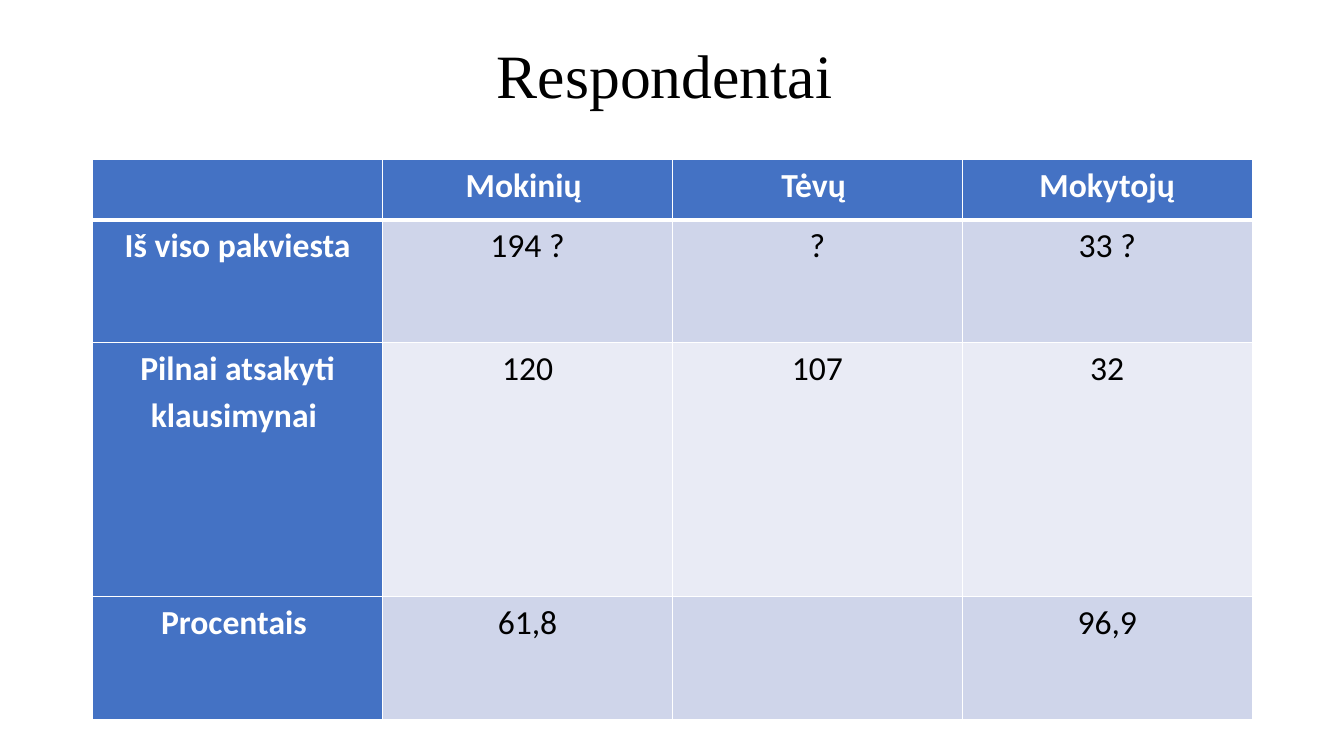
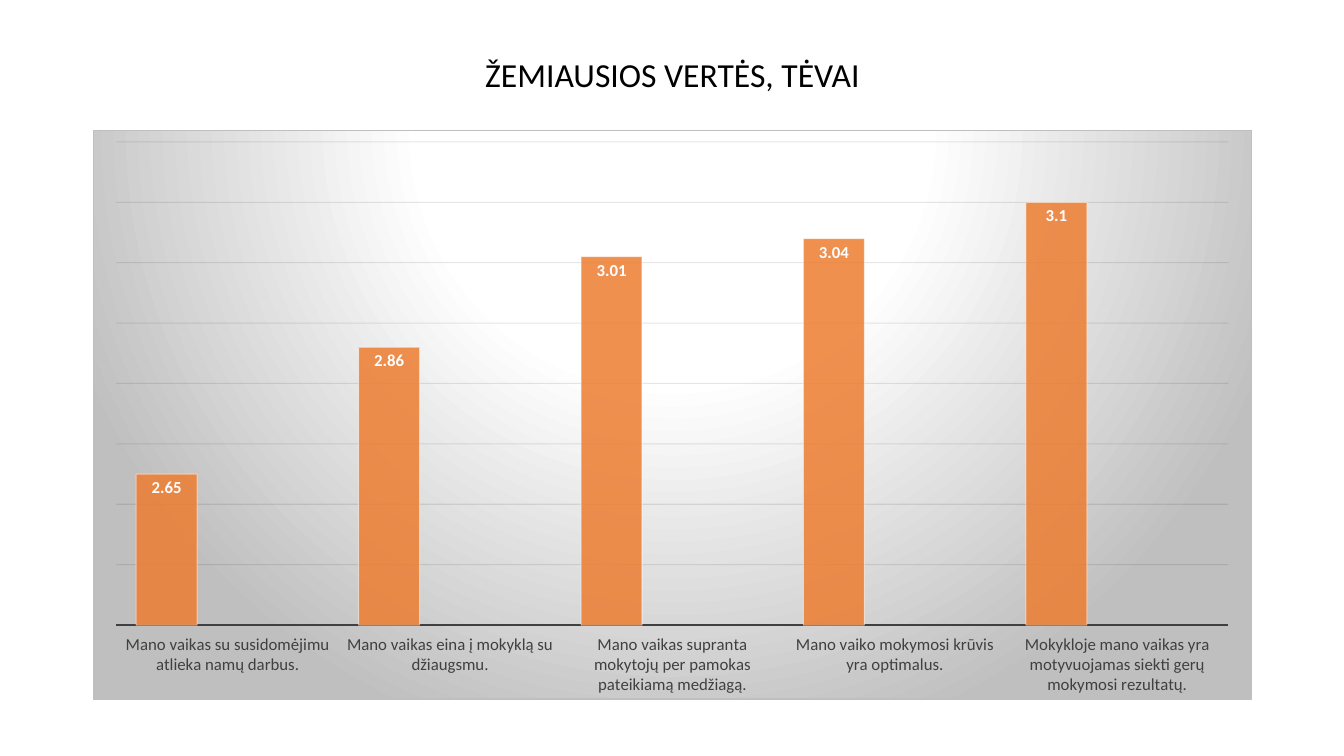
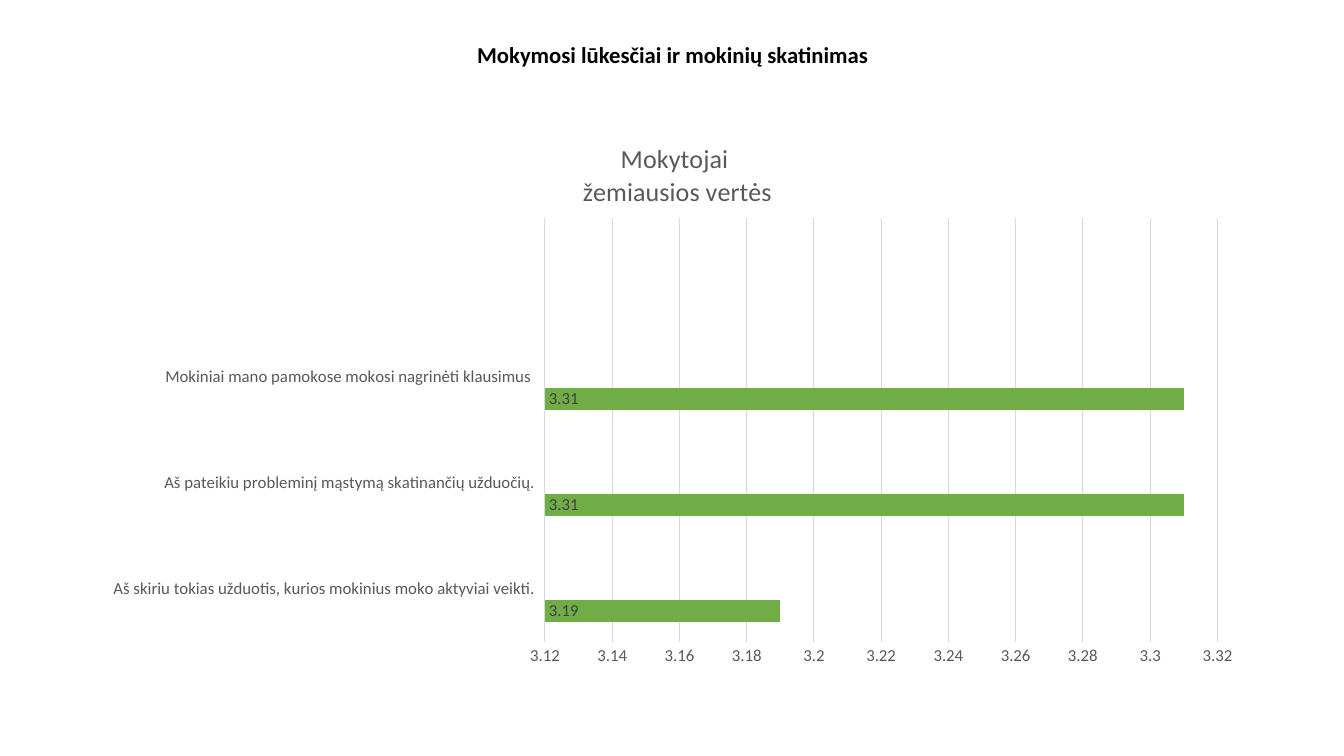
from dataclasses import dataclass

from lxml.etree import SubElement
from pptx import Presentation
from pptx.chart.data import CategoryChartData
from pptx.dml.color import RGBColor
from pptx.enum.chart import XL_CHART_TYPE, XL_LABEL_POSITION, XL_TICK_LABEL_POSITION, XL_TICK_MARK
from pptx.enum.text import MSO_ANCHOR, MSO_AUTO_SIZE, PP_ALIGN
from pptx.oxml import parse_xml
from pptx.oxml.ns import nsdecls, qn
from pptx.util import Inches, Pt


@dataclass(frozen=True)
class Theme:
    sans: str = "Calibri"
    serif: str = "Times New Roman"
    black: str = "000000"
    white: str = "FFFFFF"
    header: str = "4472C4"
    bands: tuple = ("CFD5EA", "E9EBF5")
    dark: str = "404040"
    muted: str = "595959"
    grid: str = "D9D9D9"
    ink: str = "0D0D0D"
    silver: str = "BFBFBF"
    orange: str = "ED7D31"
    gold: str = "FFC000"
    green: str = "70AD47"
    blue: str = "5B9BD5"
    display: float = 44
    heading: float = 24
    chart_title: float = 18.6
    subheading: float = 16.2
    label: float = 12


T = Theme()
LEFT, WIDTH, TITLE_TOP = 0.92, 11.5, 0.4

RESPONDENTS = [
    ["", "Mokinių ", "Tėvų ", "Mokytojų"],
    ["Iš viso pakviesta", "194 ?", "?", "33 ?"],
    ["Pilnai atsakyti klausimynai ", "120", "107", "32"],
    ["Procentais ", "61,8", "", "96,9"],
]
ROW_HEIGHTS = [0.6, 1.22, 2.52, 1.22]

PARENTS = [
    ("Mano vaikas su susidomėjimu atlieka namų darbus.", 2.65),
    ("Mano vaikas eina į mokyklą su džiaugsmu.", 2.86),
    ("Mano vaikas supranta mokytojų per pamokas pateikiamą medžiagą.", 3.01),
    ("Mano vaiko mokymosi krūvis yra optimalus.", 3.04),
    ("Mokykloje mano vaikas yra motyvuojamas siekti gerų mokymosi rezultatų.", 3.1),
]
TEACHERS = [
    ("Aš skiriu tokias užduotis, kurios mokinius moko aktyviai veikti.", 3.19),
    ("Aš pateikiu probleminį mąstymą skatinančių užduočių.", 3.31),
    ("Mokiniai mano pamokose mokosi nagrinėti klausimus ", 3.31),
    ("", None),
]
TEACHERS_TITLE = ["Mokytojai ", "žemiausios vertės"]


def rgb(value):
    return RGBColor.from_string(value)


def style_font(font, size, color, bold=False, name=T.sans):
    font.name, font.size, font.bold = name, Pt(size), bold
    font.color.rgb = rgb(color)


def write(tf, text, size=T.heading, color=T.black, bold=False, name=T.sans, spacing=None, after=None):
    lines = [text] if isinstance(text, str) else text
    for i, line in enumerate(lines):
        p = tf.add_paragraph() if i else tf.paragraphs[0]
        p.alignment = PP_ALIGN.CENTER
        if spacing:
            p.line_spacing = spacing
        if after is not None:
            p.space_after = Pt(after)
        r = p.add_run()
        r.text = line
        style_font(r.font, size, color, bold, name)


def add_slide(prs, title, height, anchor=MSO_ANCHOR.TOP, inset=0.05, spacing=0.9, **fmt):
    s = prs.slides.add_slide(prs.slide_layouts[5])
    sp = s.shapes.title
    sp.left, sp.top, sp.width, sp.height = map(Inches, (LEFT, TITLE_TOP, WIDTH, height))
    tf = sp.text_frame
    tf.word_wrap, tf.auto_size = True, MSO_AUTO_SIZE.NONE
    tf.vertical_anchor = anchor
    tf.margin_top = Inches(inset)
    write(tf, title, spacing=spacing, **fmt)
    return s


def set_borders(cell, **widths):
    tc_pr = cell._tc.get_or_add_tcPr()
    for side in "LRTB":
        ln = SubElement(tc_pr, qn(f"a:ln{side}"), w=str(Pt(widths.get(side, 1))))
        SubElement(SubElement(ln, qn("a:solidFill")), qn("a:srgbClr"), val=T.white)


def add_respondents(s):
    n_rows, n_cols = len(RESPONDENTS), len(RESPONDENTS[0])
    frame = s.shapes.add_table(n_rows, n_cols, Inches(LEFT), Inches(1.58),
                               Inches(WIDTH), Inches(sum(ROW_HEIGHTS)))
    table = frame.table
    table.first_col = True
    for col in table.columns:
        col.width = Inches(WIDTH / n_cols)
    for i, (texts, height) in enumerate(zip(RESPONDENTS, ROW_HEIGHTS)):
        table.rows[i].height = Inches(height)
        for j, text in enumerate(texts):
            cell = table.cell(i, j)
            head = i == 0 or j == 0
            set_borders(cell, **({"B": 3} if i == 0 else {"T": 3} if i == 1 else {}))
            cell.fill.solid()
            cell.fill.fore_color.rgb = rgb(T.header if head else T.bands[(i - 1) % 2])
            cell.margin_left = cell.margin_right = Inches(0.07)
            cell.margin_top = cell.margin_bottom = 0
            if text:
                write(cell.text_frame, text, color=T.white if head else T.black,
                      bold=head, spacing=1.15, after=10)


def fade(element, *percents):
    for clr, percent in zip(element.iter(qn("a:srgbClr")), percents):
        SubElement(clr, qn("a:alpha"), val=str(percent * 1000))


def set_line(line, color, width):
    line.color.rgb = rgb(color)
    line.width = Pt(width)


def place(parent, index, **fractions):
    old = parent.find(qn("c:layout"))
    if old is not None:
        parent.remove(old)
    layout = parse_xml(f"<c:layout {nsdecls('c')}><c:manualLayout/></c:layout>")
    manual = layout[0]
    if "w" in fractions:
        SubElement(manual, qn("c:layoutTarget"), val="inner")
    for key in "xy":
        SubElement(manual, qn(f"c:{key}Mode"), val="edge")
    for key, value in fractions.items():
        SubElement(manual, qn(f"c:{key}"), val=str(value))
    parent.insert(index, layout)


def add_bars(s, kind, rows, top, height, colors, gap, scale, plot_box, label_pos,
             label_color, axis_color, axis_line, grid_color, bold=False):
    data = CategoryChartData()
    data.categories = [name for name, _ in rows]
    for k in range(len(colors)):
        data.add_series(f"Series {k + 1}", [None if k else v for _, v in rows])
    chart = s.shapes.add_chart(kind, Inches(LEFT), Inches(top), Inches(WIDTH), Inches(height), data).chart
    chart.has_legend = chart.has_title = False
    style_font(chart.font, 10, T.black)
    plot = chart.plots[0]
    plot.gap_width, plot.overlap, plot.vary_by_categories = gap, 0, False
    for ser, color in zip(plot.series, colors):
        ser.invert_if_negative = False
        ser.format.fill.solid()
        ser.format.fill.fore_color.rgb = rgb(color)
        labels = ser.data_labels
        labels.show_value, labels.position = True, label_pos
        style_font(labels.font, T.label, label_color, bold)
    cat, val = chart.category_axis, chart.value_axis
    for axis in (cat, val):
        axis.major_tick_mark = axis.minor_tick_mark = XL_TICK_MARK.NONE
        style_font(axis.tick_labels.font, T.label, axis_color)
    cat.tick_label_position = XL_TICK_LABEL_POSITION.LOW
    set_line(cat.format.line, *axis_line)
    val.minimum_scale, val.maximum_scale, val.major_unit = scale
    val.format.line.fill.background()
    val.has_major_gridlines = True
    set_line(val.major_gridlines.format.line, grid_color, 0.75)
    place(chart._chartSpace.find(f".//{qn('c:plotArea')}"), 0, **plot_box)
    return chart


def add_backdrop(chart):
    stops = "".join(f'<a:gs pos="{pos * 1000}"><a:srgbClr val="{color}"/></a:gs>'
                    for pos, color in ((0, T.white), (39, T.white), (100, T.silver)))
    chart._chartSpace.find(qn("c:chart")).addnext(parse_xml(
        f'<c:spPr {nsdecls("c", "a")}><a:gradFill><a:gsLst>{stops}</a:gsLst>'
        '<a:path path="circle"><a:fillToRect l="50000" t="-80000" r="50000" b="180000"/></a:path>'
        f'</a:gradFill><a:ln w="{Pt(0.75)}"><a:solidFill><a:srgbClr val="{T.silver}"/></a:solidFill></a:ln>'
        '</c:spPr>'))


def add_parents(s):
    chart = add_bars(s, XL_CHART_TYPE.COLUMN_CLUSTERED, PARENTS, 1.29, 5.65,
                     (T.orange, T.gold, T.green), 65, (2.4, 3.2, 0.1),
                     dict(x=0.02, y=0.02, w=0.96, h=0.85), XL_LABEL_POSITION.INSIDE_END,
                     T.white, T.dark, (T.dark, 1.5), T.ink, bold=True)
    chart.value_axis.visible = False
    fade(chart.value_axis._element.find(qn("c:majorGridlines")), 10)
    for ser in chart.plots[0].series:
        set_line(ser.format.line, T.white, 0.75)
        fade(ser._element.find(qn("c:spPr")), 85, 50)
    add_backdrop(chart)


def add_teachers(s):
    chart = add_bars(s, XL_CHART_TYPE.BAR_CLUSTERED, TEACHERS, 1.15, 5.61,
                     (T.green, T.blue, T.gold), 182, (3.12, 3.32, 0.02),
                     dict(x=0.39, y=0.18, w=0.58, h=0.75), XL_LABEL_POSITION.INSIDE_BASE,
                     T.dark, T.muted, (T.grid, 0.75), T.grid)
    chart.has_title = True
    write(chart.chart_title.text_frame, TEACHERS_TITLE, size=T.chart_title, color=T.muted)
    place(chart.chart_title._element, 1, x=0.42, y=0.04)


def main():
    prs = Presentation()
    prs.slide_width, prs.slide_height = Inches(13.33), Inches(7.5)
    add_respondents(add_slide(prs, "Respondentai ", 1.45, size=T.display, name=T.serif))
    add_parents(add_slide(prs, "ŽEMIAUSIOS VERTĖS, TĖVAI", 0.72, MSO_ANCHOR.MIDDLE))
    add_teachers(add_slide(prs, "Mokymosi lūkesčiai ir mokinių skatinimas", 1.17,
                           inset=0, spacing=1.0, size=T.subheading, bold=True))
    prs.save("out.pptx")


if __name__ == "__main__":
    main()
